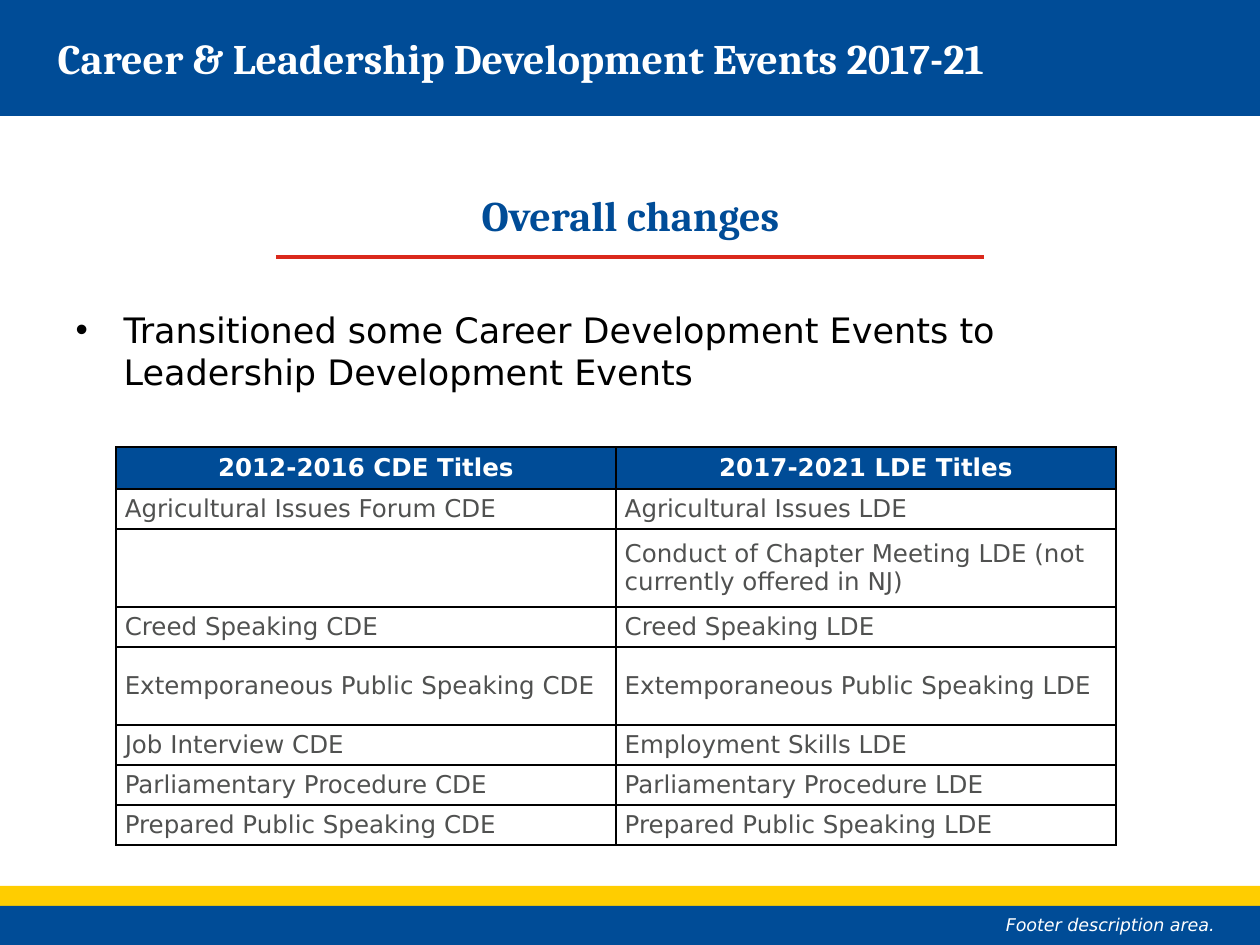
import pptx
import pptx.util
import pptx.dml.color
import pptx.enum.shapes
import pptx.enum.text
import pptx.oxml
import pptx.oxml.ns
from lxml import etree

ALIGN = pptx.enum.text.PP_ALIGN
ANCHOR = pptx.enum.text.MSO_ANCHOR
PX = 914400 // 126
COLORS = {
    "blue": "004C97",
    "yellow": "FFCD00",
    "red": "DA291C",
    "white": "FFFFFF",
    "black": "000000",
    "gray": "505150",
}
EVENTS = [
    ("2012-2016 CDE Titles", "2017-2021 LDE Titles"),
    ("Agricultural Issues Forum CDE", "Agricultural Issues LDE"),
    ("", "Conduct of Chapter Meeting LDE (not currently offered in NJ)"),
    ("Creed Speaking CDE", "Creed Speaking LDE"),
    ("Extemporaneous Public Speaking CDE", "Extemporaneous Public Speaking LDE"),
    ("Job Interview CDE", "Employment Skills LDE"),
    ("Parliamentary Procedure CDE", "Parliamentary Procedure LDE"),
    ("Prepared Public Speaking CDE", "Prepared Public Speaking LDE"),
]
HEADER_HEIGHT, ROW_HEIGHT, TALL_HEIGHT = 42, 40, 78
ROW_HEIGHTS = [HEADER_HEIGHT] + [
    TALL_HEIGHT if index in (2, 4) else ROW_HEIGHT for index in range(1, len(EVENTS))
]


def color(name):
    return pptx.dml.color.RGBColor.from_string(COLORS[name])


def emu(*lengths):
    return [pptx.util.Emu(length * PX) for length in lengths]


class SlideBuilder:
    heading_font = "Cambria"
    body_font = "DejaVu Sans"

    def __init__(self, slide):
        self.slide = slide

    def style(self, paragraph, name, size, ink, bold=False, italic=False, align=ALIGN.LEFT):
        paragraph.alignment = align
        font = paragraph.font
        font.name, font.size = name, pptx.util.Pt(size)
        font.bold, font.italic = bold, italic
        font.color.rgb = color(ink)

    def bar(self, left, top, width, height, fill):
        shape = self.slide.shapes.add_shape(
            pptx.enum.shapes.MSO_SHAPE.RECTANGLE, *emu(left, top, width, height))
        shape.shadow.inherit = False
        shape.fill.solid()
        shape.fill.fore_color.rgb = color(fill)
        shape.line.fill.background()

    def rule(self, left, right, y, ink, weight):
        connector = self.slide.shapes.add_connector(
            pptx.enum.shapes.MSO_CONNECTOR.STRAIGHT, *emu(left, y, right, y))
        connector.line.color.rgb = color(ink)
        connector.line.width = pptx.util.Pt(weight)
        properties = connector._element.spPr
        etree.SubElement(properties, pptx.oxml.ns.qn("a:effectLst"))

    def placeholder(self, index, box, text, bullet=None, hanging=0, **style):
        shape = self.slide.placeholders[index]
        shape.left, shape.top, shape.width, shape.height = emu(*box)
        shape._element.getparent().append(shape._element)
        frame = shape.text_frame
        frame.text = text
        frame.word_wrap = True
        frame.auto_size = pptx.enum.text.MSO_AUTO_SIZE.NONE
        frame.vertical_anchor = ANCHOR.TOP
        paragraph = frame.paragraphs[0]
        properties = paragraph._p.get_or_add_pPr()
        properties.set("marL", str(hanging * PX))
        properties.set("indent", str(-hanging * PX))
        paragraph.space_before = pptx.util.Pt(0)
        tag = "a:buChar" if bullet else "a:buNone"
        mark = etree.SubElement(properties, pptx.oxml.ns.qn(tag))
        if bullet:
            mark.set("char", bullet)
        self.style(paragraph, **style)

    def text(self, box, text, **style):
        frame = self.slide.shapes.add_textbox(*emu(*box)).text_frame
        frame.word_wrap = True
        frame.text = text
        self.style(frame.paragraphs[0], **style)

    def border(self, cell):
        properties = cell._tc.get_or_add_tcPr()
        for side in ("lnL", "lnR", "lnT", "lnB"):
            properties.append(pptx.oxml.parse_xml(
                f'<a:{side} {pptx.oxml.ns.nsdecls("a")} w="12700"><a:solidFill>'
                f'<a:srgbClr val="{COLORS["black"]}"/></a:solidFill></a:{side}>'))

    def cell(self, cell, text, header):
        self.border(cell)
        if header:
            cell.fill.solid()
            cell.fill.fore_color.rgb = color("blue")
        else:
            cell.fill.background()
        cell.margin_left = cell.margin_right = pptx.util.Inches(0.07)
        cell.margin_top = cell.margin_bottom = 0
        cell.vertical_anchor = ANCHOR.MIDDLE
        cell.text = text
        self.style(cell.text_frame.paragraphs[0], self.body_font, 14,
                   "white" if header else "gray", bold=header,
                   align=ALIGN.CENTER if header else ALIGN.LEFT)

    def table(self, left, top, column_width, row_heights, rows):
        columns = len(rows[0])
        table = self.slide.shapes.add_table(
            len(rows), columns,
            *emu(left, top, column_width * columns, sum(row_heights))).table
        table.horz_banding = False
        for column in table.columns:
            column.width = emu(column_width)[0]
        for row_index, (height, texts) in enumerate(zip(row_heights, rows)):
            table.rows[row_index].height = emu(height)[0]
            for column_index, text in enumerate(texts):
                self.cell(table.cell(row_index, column_index), text, row_index == 0)


def main():
    presentation = pptx.Presentation()
    presentation.slide_width, presentation.slide_height = emu(1260, 945)
    slide = presentation.slides.add_slide(presentation.slide_layouts[3])
    builder = SlideBuilder(slide)
    builder.bar(0, 0, 1260, 116, "blue")
    builder.bar(0, 886, 1260, 36, "yellow")
    builder.bar(0, 906, 1260, 39, "blue")
    builder.rule(276, 984, 257, "red", 2)
    builder.placeholder(0, (45, 26, 1134, 135),
                        "Career & Leadership Development Events 2017-21",
                        name=builder.heading_font, size=24, ink="white", bold=True)
    builder.placeholder(1, (301, 183, 659, 118), "Overall changes",
                        name=builder.heading_font, size=24, ink="blue", bold=True,
                        align=ALIGN.CENTER)
    builder.placeholder(2, (63, 302, 1134, 542),
                        "Transitioned some Career Development Events to "
                        "Leadership Development Events",
                        bullet="•", hanging=48,
                        name=builder.body_font, size=20, ink="black")
    builder.text((678, 908, 549, 34), "Footer description area.",
                 name=builder.body_font, size=10, ink="white", italic=True,
                 align=ALIGN.RIGHT)
    builder.table(116, 447, 500, ROW_HEIGHTS, EVENTS)
    presentation.save("out.pptx")


if __name__ == "__main__":
    main()
